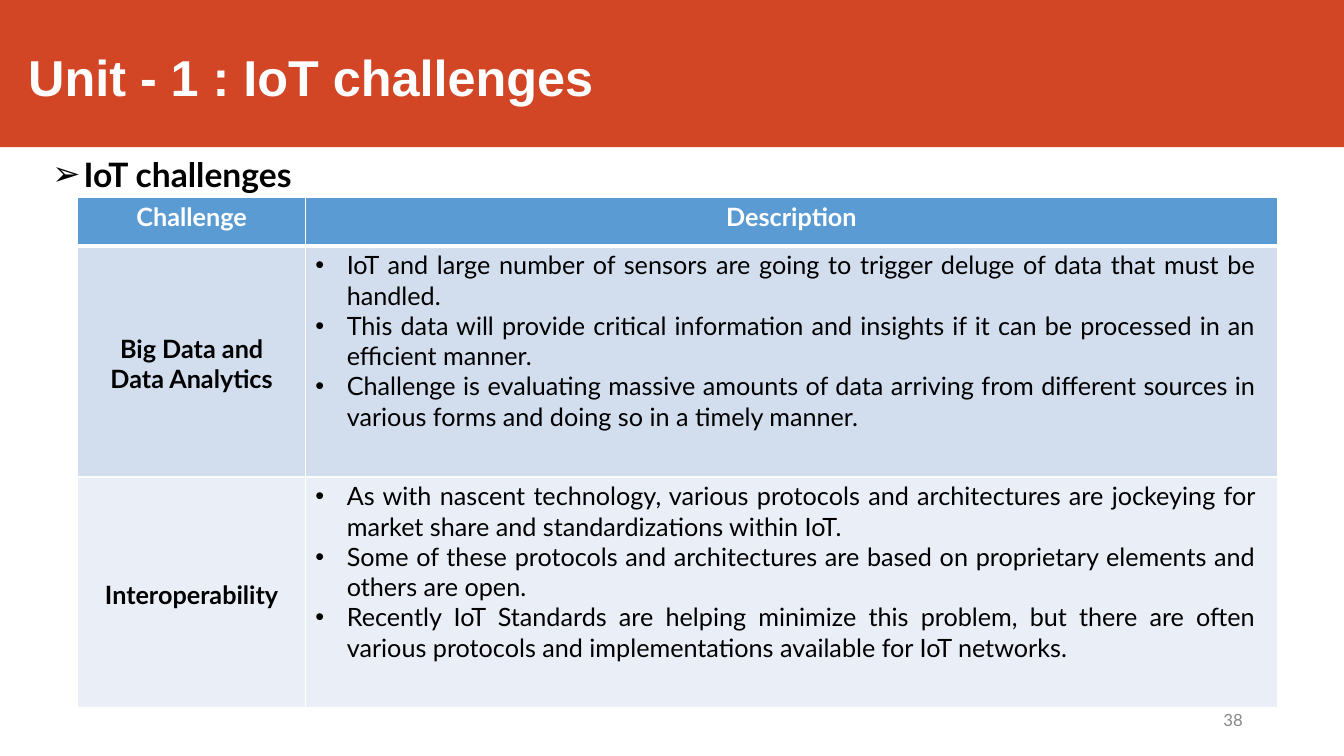
"""Build the slide about the challenges of IoT."""
from dataclasses import dataclass

from lxml import etree
from pptx import Presentation
from pptx.dml.color import RGBColor
from pptx.enum.shapes import MSO_SHAPE
from pptx.enum.text import MSO_ANCHOR, MSO_AUTO_SIZE, PP_ALIGN
from pptx.oxml.ns import qn
from pptx.util import Cm, Pt

RECTANGLE = MSO_SHAPE.RECTANGLE
TOP, MIDDLE = MSO_ANCHOR.TOP, MSO_ANCHOR.MIDDLE
LEFT, CENTER, JUSTIFY = PP_ALIGN.LEFT, PP_ALIGN.CENTER, PP_ALIGN.JUSTIFY
NO_AUTOFIT = MSO_AUTO_SIZE.NONE

WHITE, BLACK, GRAY = "FFFFFF", "000000", "888888"
BAND_RED, HEADER_BLUE = "D24625", "5B9BD4"
SLIDE_WIDTH, SLIDE_HEIGHT = 33.87, 19.05
COLUMN_WIDTHS = (5.74, 24.49)
HEADER_HEIGHT, BODY_HEIGHT = 1.22, 5.82
THIN, THICK = 1, 3


@dataclass(frozen=True)
class TextStyle:
    size: float
    color: str
    bold: bool = False
    font: str = "Lato"
    align: int = LEFT
    space_before: float = 0
    bullet: str = ""
    indent: float = 0


@dataclass(frozen=True)
class Box:
    left: float
    top: float
    width: float
    height: float


@dataclass(frozen=True)
class Challenge:
    name: str
    points: tuple[str, ...]
    fill: str


TITLE = TextStyle(36, WHITE, True, "Arial", space_before=1)
SUBTITLE = TextStyle(24, BLACK, True, space_before=1, bullet="➢", indent=0.84)
PAGE_NUMBER = TextStyle(12, GRAY, space_before=1.9)
HEADER = TextStyle(18, WHITE, True, align=CENTER, space_before=3.1)
NAME = TextStyle(18, BLACK, True, align=CENTER)
POINT = TextStyle(18, BLACK, align=JUSTIFY, bullet="•", indent=1.04)

CHALLENGES = (
    Challenge("Big Data and\vData Analytics", (
        "IoT and large number of sensors are going to trigger deluge of data that must be handled.",
        "This data will provide critical information and insights if it can be processed in an "
        "efficient manner.",
        "Challenge is evaluating massive amounts of data arriving from different sources in "
        "various forms and doing so in a timely manner.",
    ), "D2DEEE"),
    Challenge("Interoperability", (
        "As with nascent technology, various protocols and architectures are jockeying for "
        "market share and standardizations within IoT.",
        "Some of these protocols and architectures are based on proprietary elements and "
        "others are open.",
        "Recently IoT Standards are helping minimize this problem, but there are often "
        "various protocols and implementations available for IoT networks.",
    ), "EAEEF7"),
)


def rgb(color: str) -> RGBColor:
    """Turn a hex string into a colour."""
    return RGBColor.from_string(color)


def add_bullet(paragraph, style: TextStyle) -> None:
    """Give a paragraph a hanging bullet."""
    properties = paragraph._p.get_or_add_pPr()
    properties.set("marL", str(Cm(style.indent)))
    properties.set("indent", str(-Cm(0.79)))
    etree.SubElement(properties, qn("a:buFont"), typeface="Arial")
    etree.SubElement(properties, qn("a:buChar"), char=style.bullet)


def write(frame, lines: tuple[str, ...], style: TextStyle) -> None:
    """Fill a text frame with equally styled paragraphs."""
    for index, line in enumerate(lines):
        paragraph = frame.add_paragraph() if index else frame.paragraphs[0]
        paragraph.text = line
        if style.bullet:
            add_bullet(paragraph, style)
        paragraph.alignment = style.align
        paragraph.space_before = Pt(style.space_before)
        font = paragraph.font
        font.name, font.size, font.bold = style.font, Pt(style.size), style.bold
        font.color.rgb = rgb(style.color)


def place_text(shape, box: Box, text: str, style: TextStyle) -> None:
    """Position a text shape and write its single line."""
    shape.left, shape.top = Cm(box.left), Cm(box.top)
    shape.width, shape.height = Cm(box.width), Cm(box.height)
    frame = shape.text_frame
    frame.auto_size, frame.word_wrap = NO_AUTOFIT, True
    frame.vertical_anchor = TOP
    frame.margin_left = frame.margin_right = frame.margin_bottom = 0
    frame.margin_top = Cm(0.03)
    write(frame, (text,), style)


def add_text(slide, box: Box, text: str, style: TextStyle) -> None:
    """Add a text box."""
    place_text(slide.shapes.add_textbox(0, 0, 0, 0), box, text, style)


def set_borders(cell, top: float, bottom: float) -> None:
    """Draw white borders around a cell."""
    properties = cell._tc.get_or_add_tcPr()
    widths = {"lnL": THIN, "lnR": THIN, "lnT": top, "lnB": bottom}
    for index, (side, width) in enumerate(widths.items()):
        line = etree.Element(qn(f"a:{side}"), w=str(Pt(width)))
        fill = etree.SubElement(line, qn("a:solidFill"))
        etree.SubElement(fill, qn("a:srgbClr"), val=WHITE)
        properties.insert(index, line)


def fill_cell(cell, lines: tuple[str, ...], style: TextStyle, fill: str,
              anchor: int = TOP, margin_right: float = 0) -> None:
    """Write and colour a table cell."""
    cell.margin_left = cell.margin_bottom = 0
    cell.margin_right = Cm(margin_right)
    cell.margin_top = Cm(0.1)
    cell.vertical_anchor = anchor
    cell.fill.solid()
    cell.fill.fore_color.rgb = rgb(fill)
    write(cell.text_frame, lines, style)


def add_challenge_table(slide) -> None:
    """Add the table of challenges and descriptions."""
    heights = (HEADER_HEIGHT,) + (BODY_HEIGHT,) * len(CHALLENGES)
    table = slide.shapes.add_table(
        len(heights), len(COLUMN_WIDTHS), Cm(1.96), Cm(4.98),
        Cm(sum(COLUMN_WIDTHS)), Cm(sum(heights))).table
    for column, width in zip(table.columns, COLUMN_WIDTHS):
        column.width = Cm(width)
    for row, height in zip(table.rows, heights):
        row.height = Cm(height)
    for column, heading in enumerate(("Challenge", "Description")):
        fill_cell(table.cell(0, column), (heading,), HEADER, HEADER_BLUE)
    for row, challenge in enumerate(CHALLENGES, 1):
        fill_cell(table.cell(row, 0), (challenge.name,), NAME, challenge.fill, MIDDLE)
        fill_cell(table.cell(row, 1), challenge.points, POINT, challenge.fill, margin_right=0.55)
    for row in range(len(heights)):
        for column in range(len(COLUMN_WIDTHS)):
            set_borders(table.cell(row, column),
                        THICK if row == 1 else THIN, THICK if row == 0 else THIN)


def add_title_band(slide) -> None:
    """Add the red band behind the title."""
    band = slide.shapes.add_shape(RECTANGLE, 0, 0, Cm(SLIDE_WIDTH), Cm(3.71))
    band.shadow.inherit = False
    band.fill.solid()
    band.fill.fore_color.rgb = rgb(BAND_RED)
    band.line.fill.background()
    slide.shapes.title.element.addprevious(band.element)


def main() -> None:
    """Build and save the presentation."""
    presentation = Presentation()
    presentation.slide_width, presentation.slide_height = Cm(SLIDE_WIDTH), Cm(SLIDE_HEIGHT)
    slide = presentation.slides.add_slide(presentation.slide_layouts[5])
    add_title_band(slide)
    place_text(slide.shapes.title, Box(0.71, 1.14, 16.31, 1.6), "Unit - 1 : IoT challenges", TITLE)
    add_text(slide, Box(1.27, 3.84, 6.55, 1.09), "IoT challenges", SUBTITLE)
    add_challenge_table(slide)
    add_text(slide, Box(30.83, 17.86, 0.66, 0.64), "38", PAGE_NUMBER)
    presentation.save("out.pptx")


if __name__ == "__main__":
    main()
